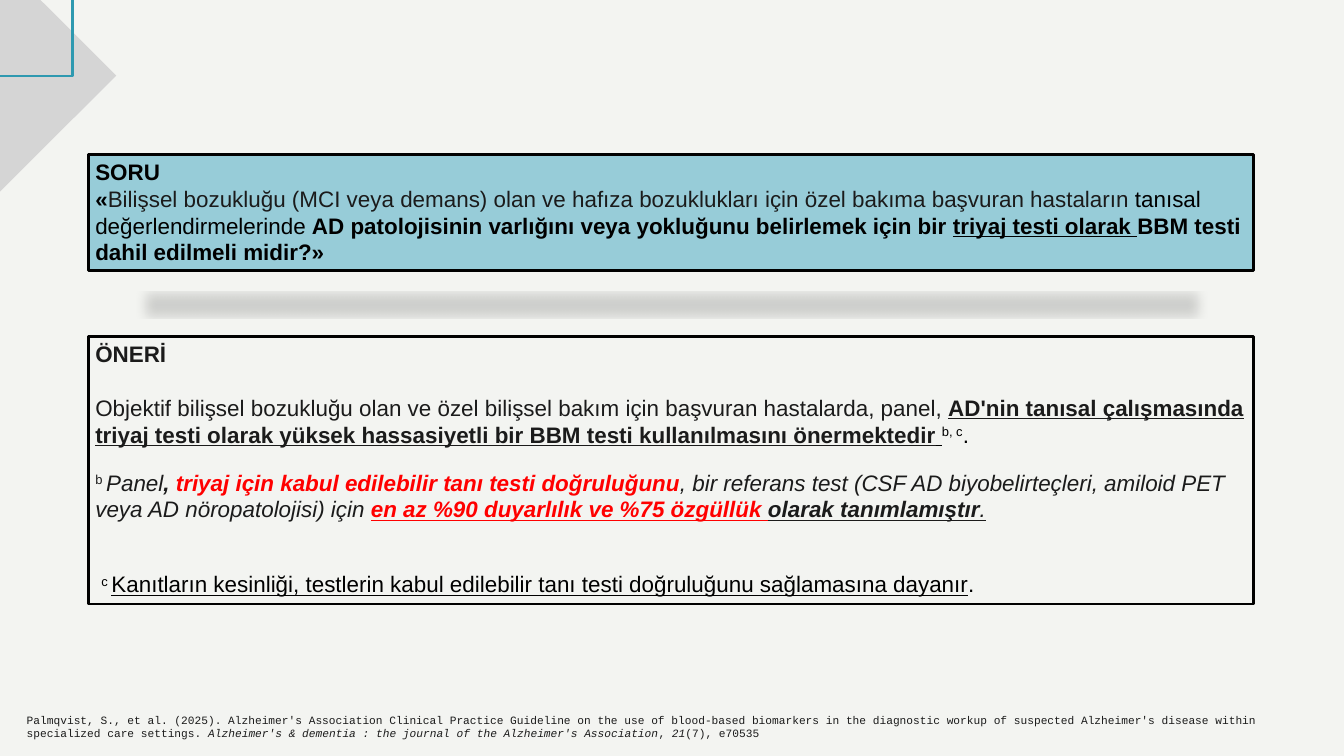
import lxml.etree
import pptx
import pptx.dml.color
import pptx.enum.shapes
import pptx.enum.text
import pptx.oxml.ns
import pptx.util
from pptx.util import Inches

RGBColor = pptx.dml.color.RGBColor
PAPER = RGBColor(0xF3, 0xF4, 0xF1)
GREY = RGBColor(0xD5, 0xD5, 0xD5)
TEAL = RGBColor(0x2E, 0x99, 0xB0)
LIGHT_TEAL = RGBColor(0x97, 0xCC, 0xD8)
BLACK = RGBColor(0, 0, 0)
INK = RGBColor(0x1B, 0x1B, 0x1B)
RED = RGBColor(0xFF, 0, 0)

QUESTION = [
    (0, [("SORU", "b", BLACK)]),
    (0, [
        ("«", "b", BLACK),
        ("Bilişsel bozukluğu (MCI veya demans) olan ve hafıza bozuklukları için "
         "özel bakıma başvuran hastaların ", "", INK),
        ("tanısal değerlendirmelerinde ", "", BLACK),
        ("AD patolojisinin varlığını veya yokluğunu belirlemek için bir ", "b", BLACK),
        ("triyaj testi olarak ", "bu", BLACK),
        ("BBM testi dahil edilmeli midir?»", "b", BLACK),
    ]),
]
ADVICE = [
    (0, [("ÖNERİ", "b", INK)]),
    (29, [
        ("Objektif bilişsel bozukluğu olan ve özel bilişsel bakım için başvuran "
         "hastalarda, panel, ", "", INK),
        ("AD'nin tanısal çalışmasında triyaj testi olarak yüksek hassasiyetli bir "
         "BBM testi kullanılmasını önermektedir", "bu", INK),
        (" ", "bu", BLACK),
        ("b, c", "^", BLACK),
        (".", "", BLACK),
    ]),
    (22.5, [
        ("b ", "^", INK),
        ("Panel", "i", INK),
        (", ", "bi", INK),
        ("triyaj için kabul edilebilir tanı testi doğruluğunu", "bi", RED),
        (", bir referans test (CSF AD biyobelirteçleri, amiloid PET veya AD "
         "nöropatolojisi) için ", "i", INK),
        ("en az %90 duyarlılık ve %75 özgüllük ", "biu", RED),
        ("olarak tanımlamıştır", "biu", INK),
        (".", "iu", INK),
    ]),
    (51.5, [
        ("c ", "^", BLACK),
        ("Kanıtların kesinliği, testlerin kabul edilebilir tanı testi doğruluğunu "
         "sağlamasına dayanır", "u", BLACK),
        (".", "", BLACK),
    ]),
]
CITATION = [
    (0, [
        ("Palmqvist, S., et al. (2025). Alzheimer's Association Clinical Practice "
         "Guideline on the use of blood-based biomarkers in the diagnostic workup of "
         "suspected Alzheimer's disease within specialized care settings. ", "", INK),
        ("Alzheimer's & dementia : the journal of the Alzheimer's Association", "i", INK),
        (", ", "", INK),
        ("21", "i", INK),
        ("(7), e70535", "", INK),
    ]),
]


def add_panel(page, kind, left, top, width, height, fill=None, line=None):
    """Add a preset shape with an optional fill and a 3 pt outline."""
    panel = page.shapes.add_shape(kind, Inches(left), Inches(top), Inches(width), Inches(height))
    panel.shadow.inherit = False
    if fill is None:
        panel.fill.background()
    else:
        panel.fill.solid()
        panel.fill.fore_color.rgb = fill
    if line is None:
        panel.line.fill.background()
    else:
        panel.line.color.rgb = line
        panel.line.width = pptx.util.Pt(3)
    return panel


def write_paragraphs(box, paragraphs, font_name, size):
    """Fill a box with paragraphs of styled spans (b, i, u and ^ for superscript)."""
    frame = box.text_frame
    frame.word_wrap = True
    frame.vertical_anchor = pptx.enum.text.MSO_ANCHOR.TOP
    for index, (space_before, spans) in enumerate(paragraphs):
        para = frame.paragraphs[0] if index == 0 else frame.add_paragraph()
        para.alignment = pptx.enum.text.PP_ALIGN.LEFT
        if space_before:
            para.space_before = pptx.util.Pt(space_before)
        para.font.name = font_name
        para.font.size = pptx.util.Pt(size)
        for text, style, colour in spans:
            span = para.add_run()
            span.text = text
            span.font.color.rgb = colour
            for mark, attribute in (("b", "bold"), ("i", "italic"), ("u", "underline")):
                if mark in style:
                    setattr(span.font, attribute, True)
            if "^" in style:
                span.font._element.set("baseline", "30000")


def add_perspective_shadow(panel):
    """Cast a flattened, blurred shadow below a panel."""
    qn = pptx.oxml.ns.qn
    effects = panel._element.spPr.find(qn("a:effectLst"))
    shadow = lxml.etree.SubElement(
        effects, qn("a:outerShdw"), blurRad="152400", dist="317500", dir="5400000",
        sx="90000", sy="-19000", rotWithShape="0")
    colour = lxml.etree.SubElement(shadow, qn("a:srgbClr"), val=str(BLACK))
    lxml.etree.SubElement(colour, qn("a:alpha"), val="15000")


def add_corner(page):
    """Place the grey diamond and teal square in the top left corner."""
    shapes = pptx.enum.shapes.MSO_SHAPE
    add_panel(page, shapes.DIAMOND, -2.83, -1.15, 4.56, 4.55, fill=GREY)
    add_panel(page, shapes.RECTANGLE, -1.76, -1.71, 2.84, 2.84, line=TEAL)


def add_statement(page, paragraphs, left, top, width, height, fill=None):
    """Place a black-framed panel of text."""
    kind = pptx.enum.shapes.MSO_SHAPE.RECTANGLE
    panel = add_panel(page, kind, left, top, width, height, fill, BLACK)
    write_paragraphs(panel, paragraphs, "Arial", 24)
    return panel


def add_citation(page, left, top, width, height):
    """Place the reference at the foot of the page."""
    box = page.shapes.add_textbox(Inches(left), Inches(top), Inches(width), Inches(height))
    write_paragraphs(box, CITATION, "Courier New", 12)


def main():
    """Build the page and save the deck."""
    deck = pptx.Presentation()
    deck.slide_width, deck.slide_height = Inches(20), Inches(11.25)
    page = deck.slides.add_slide(deck.slide_layouts[6])
    page.background.fill.solid()
    page.background.fill.fore_color.rgb = PAPER
    add_corner(page)
    question = add_statement(page, QUESTION, 1.32, 2.3, 17.33, 1.72, LIGHT_TEAL)
    add_perspective_shadow(question)
    advice = add_statement(page, ADVICE, 1.32, 5.01, 17.33, 3.98)
    advice.text_frame.paragraphs[-1]._p.get_or_add_pPr().set("marL", str(Inches(0.09)))
    add_citation(page, 0.3, 10.56, 19.37, 0.5)
    deck.save("out.pptx")


if __name__ == "__main__":
    main()
